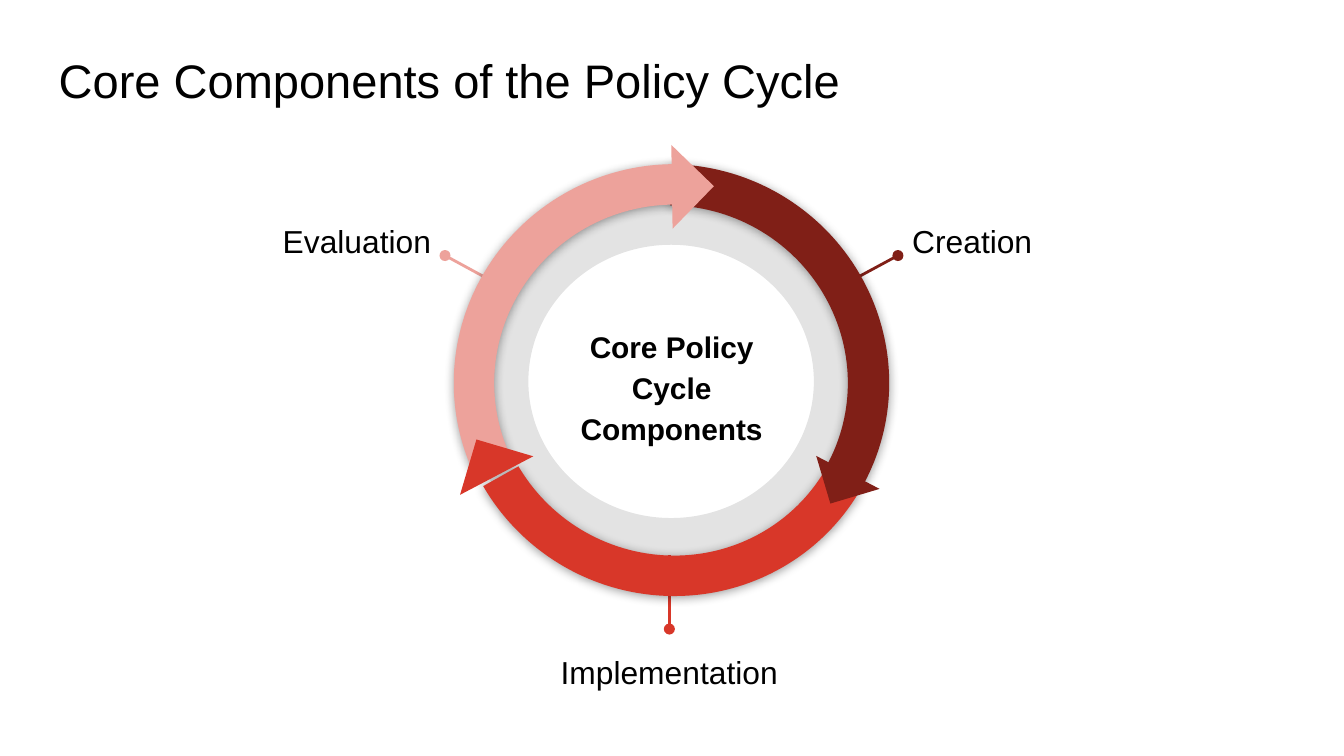
from lxml import etree
from pptx import Presentation
from pptx.dml.color import RGBColor
from pptx.enum.shapes import MSO_CONNECTOR, MSO_SHAPE
from pptx.enum.text import MSO_ANCHOR, PP_ALIGN
from pptx.oxml.ns import qn
from pptx.util import Cm, Pt

LEFT, MID, RIGHT = PP_ALIGN.LEFT, PP_ALIGN.CENTER, PP_ALIGN.RIGHT
TOP, CENTER = MSO_ANCHOR.TOP, MSO_ANCHOR.MIDDLE
DONUT, ARC, TIP = MSO_SHAPE.DONUT, MSO_SHAPE.BLOCK_ARC, MSO_SHAPE.RIGHT_TRIANGLE
LINE = MSO_CONNECTOR.STRAIGHT

BLACK = RGBColor(0x00, 0x00, 0x00)
DARK = RGBColor(0x80, 0x1F, 0x17)
RED = RGBColor(0xD8, 0x37, 0x29)
PINK = RGBColor(0xED, 0xA2, 0x9B)

# Content; all lengths in cm, boxes as left, top, width, height
TITLE = "Core Components of the Policy Cycle"
HUB = "Core Policy Cycle Components"
# label, align, box, pointer (dot x, y, ring x, y), colour
LABELS = [
    ("Evaluation", RIGHT, (3.78, 3.84, 4.62, 2.01), (8.41, 4.83, 9.75, 5.56), PINK),
    ("Creation", LEFT, (16.99, 3.84, 4.62, 2.01), (16.97, 4.83, 15.62, 5.56), DARK),
    ("Implementation", MID, (9.27, 11.99, 6.76, 2.01), (12.65, 11.89, 12.65, 10.49), RED),
]
RING = (8.76, 3.4, 7.85, 7.62)
WHEEL = (8.56, 3.12, 8.26, 8.13)
# Ring parts from back to front: kind, box, turn, colour,
# then for arcs: mirrored, start and end angle in degrees, thickness
PARTS = [
    (ARC, WHEEL, 29.3, DARK, (False, 240.24, 0.01, 0.096)),
    (ARC, WHEEL, 330.7, PINK, (True, 239.14, 357.88, 0.094)),
    (TIP, (12.14, 2.97, 1.12, 1.12), 224.1, PINK, None),
    (ARC, WHEEL, 209.2, RED, (True, 238.6, 358.38, 0.094)),
    (TIP, (15.54, 8.46, 0.97, 0.94), 343.4, DARK, None),
    (TIP, (8.84, 8.43, 1.09, 1.12), 106.5, RED, None),
]

deck = Presentation()
deck.slide_width, deck.slide_height = Cm(25.4), Cm(14.29)
slide = deck.slides.add_slide(deck.slide_layouts[6])
shapes = slide.shapes


def add_sub(node, tag, **attrs):
    child = etree.SubElement(node, qn(tag))
    for key, val in attrs.items():
        child.set(key, str(val))
    return child


def add_text(text, box, size, align=LEFT, anchor=TOP, bold=False, space=1.15):
    frame = shapes.add_textbox(*map(Cm, box)).text_frame
    frame.word_wrap = True
    frame.vertical_anchor = anchor
    frame.margin_left = frame.margin_right = Cm(0.25)
    frame.margin_top = frame.margin_bottom = Cm(0.25)
    para = frame.paragraphs[0]
    para.text = text
    para.alignment, para.line_spacing = align, space
    font = para.font
    font.name, font.size, font.bold = "Arial", Pt(size), bold
    font.color.rgb = BLACK


def add_part(kind, box, color):
    part = shapes.add_shape(kind, *map(Cm, box))
    part.shadow.inherit = False
    part.fill.solid()
    part.fill.fore_color.rgb = color
    part.line.fill.background()
    return part


def add_pointer(ends, color):
    line = shapes.add_connector(LINE, *map(Cm, ends))
    line.line.color.rgb = color
    line.line.width = Pt(1.5)
    props = line._element.spPr
    add_sub(props.find(qn("a:ln")), "a:headEnd", type="oval")
    add_sub(props, "a:effectLst")


def add_shadow(part):
    effects = part._element.spPr.find(qn("a:effectLst"))
    shade = add_sub(effects, "a:outerShdw", blurRad=Pt(5.6), dist=Pt(0.8),
                    dir=90 * 60000, algn="bl", rotWithShape=0)
    add_sub(add_sub(shade, "a:srgbClr", val=BLACK), "a:alpha", val=40000)


# Title
add_text(TITLE, (0.86, 0.71, 23.67, 1.6), 25.2, anchor=CENTER, space=1.0)

# Pale inner ring
ring = add_part(DONUT, RING, BLACK)
ring.adjustments[0] = 0.161
tint = ring._element.spPr.find(qn("a:solidFill"))[0]
add_sub(tint, "a:alpha", val=11000)

# Labels with pointers
for label, align, box, ends, color in LABELS:
    add_pointer(ends, color)
    add_text(label, box, 17, align)

# Hub text
add_text(HUB, (10.46, 6.07, 4.47, 2.41), 16, MID, CENTER, bold=True)

# Arcs and arrow tips
for kind, box, turn, color, bend in PARTS:
    part = add_part(kind, box, color)
    part.rotation = turn
    if bend:
        flip, start, end, thick = bend
        # Angles are stored in 1/60000 degree, adjustments in 1/100000
        for i, val in enumerate((start * 0.6, end * 0.6, thick)):
            part.adjustments[i] = val
        if flip:
            part._element.spPr.find(qn("a:xfrm")).set("flipH", "1")
        add_shadow(part)

deck.save("out.pptx")
